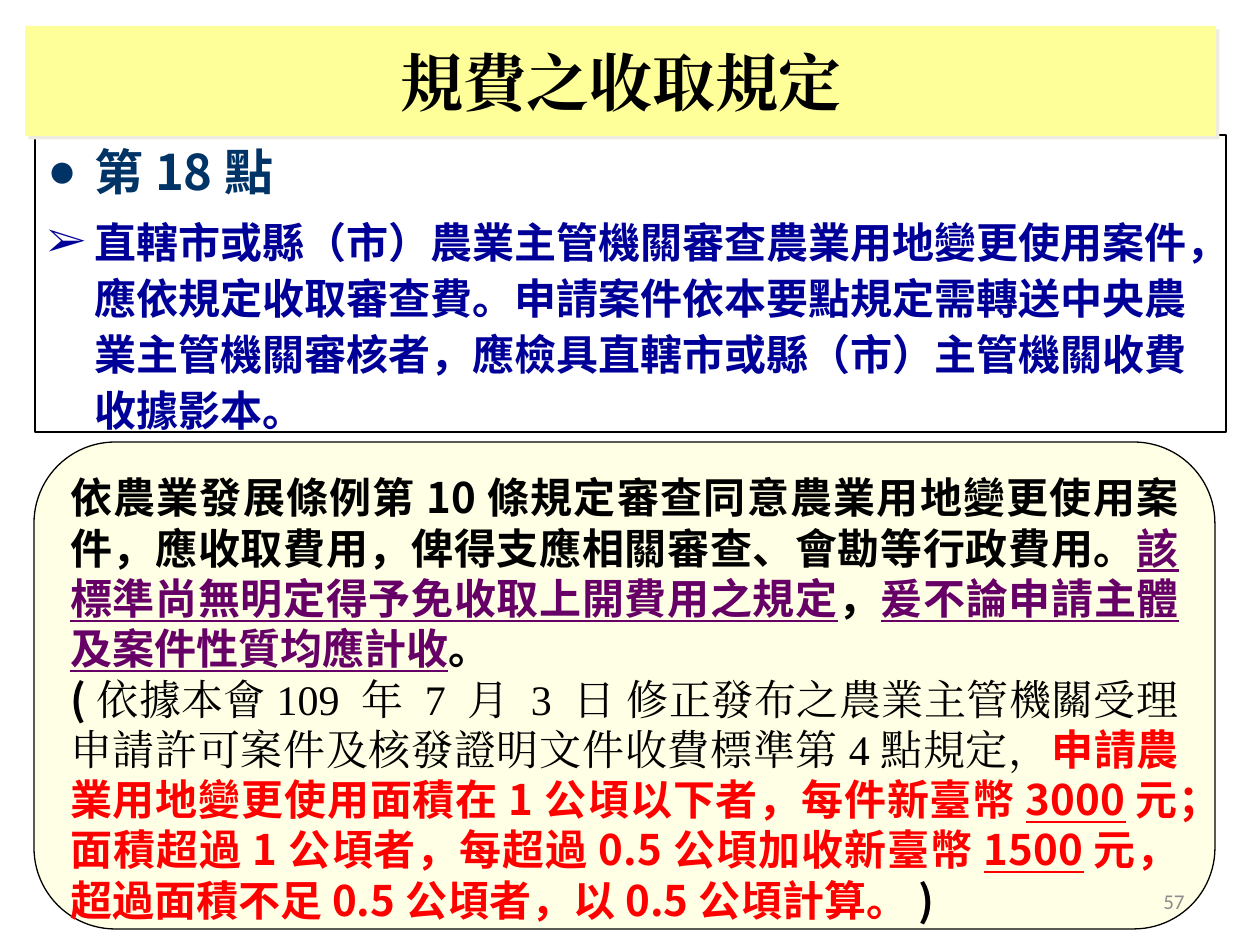
from lxml import etree
from pptx import Presentation
from pptx import util as u
from pptx.dml.color import RGBColor
from pptx.enum import shapes, text
from pptx.oxml.ns import qn

EMU_PER_PX = 914400 / 126
SANS, SERIF = "Noto Sans CJK SC", "Times New Roman"
BLACK = RGBColor(0x00, 0x00, 0x00)
NAVY = RGBColor(0x00, 0x33, 0x66)
BLUE = RGBColor(0x00, 0x00, 0x99)
PURPLE = RGBColor(0x66, 0x00, 0x66)
RED = RGBColor(0xFF, 0x00, 0x00)
GREY = RGBColor(0x8C, 0x8C, 0x8C)
YELLOW = RGBColor(0xFF, 0xFF, 0x99)


def px(value):
    return u.Emu(round(value * EMU_PER_PX))


def add_xml(parent, tag, **attributes):
    return etree.SubElement(parent, qn(tag), attributes)


class SlideBuilder:
    def __init__(self, slide):
        self.slide = slide

    def box(self, kind, left, top, width, height, fill=None, alpha=None, outlined=True):
        shape = self.slide.shapes.add_shape(kind, px(left), px(top), px(width), px(height))
        shape.shadow.inherit = False
        if fill is None:
            shape.fill.background()
        else:
            shape.fill.solid()
            shape.fill.fore_color.rgb = fill
            if alpha is not None:
                color = shape.fill._xPr.find(qn("a:solidFill"))[0]
                add_xml(color, "a:alpha", val=str(alpha * 1000))
        if outlined:
            shape.line.color.rgb = BLACK
            shape.line.width = u.Pt(0.75)
        else:
            shape.line.fill.background()
        shape.text_frame.word_wrap = True
        shape.text_frame.vertical_anchor = text.MSO_ANCHOR.TOP
        return shape

    def drop_shadow(self, shape, color):
        effects = shape._element.spPr.find(qn("a:effectLst"))
        shadow = add_xml(effects, "a:outerShdw", dist=str(u.Pt(2.8)),
                         dir="2700000", algn="ctr", rotWithShape="0")
        add_xml(shadow, "a:srgbClr", val=color)

    def text_box(self, left, top, width, height):
        shape = self.slide.shapes.add_textbox(px(left), px(top), px(width), px(height))
        shape.text_frame.word_wrap = True
        return shape

    def paragraph(self, shape, align, line_spacing=None, before=0):
        frame = shape.text_frame
        first = frame.paragraphs[0]
        paragraph = frame.add_paragraph() if first.runs else first
        paragraph.alignment = align
        paragraph.space_before = u.Pt(before)
        if line_spacing:
            paragraph.line_spacing = u.Pt(line_spacing)
        return paragraph

    def bullet(self, paragraph, character, indent):
        properties = paragraph._p.get_or_add_pPr()
        properties.set("marL", str(px(indent)))
        properties.set("indent", str(-px(indent)))
        add_xml(properties, "a:buFont", typeface=SERIF)
        add_xml(properties, "a:buChar", char=character)

    def run(self, paragraph, words, size, color=BLACK, font=SANS, bold=True, underline=False):
        run = paragraph.add_run()
        run.text = words
        run.font.size = u.Pt(size)
        run.font.name = font
        run.font.bold = bold
        run.font.underline = underline
        run.font.color.rgb = color
        add_xml(run._r.get_or_add_rPr(), "a:ea", typeface=font)


def main():
    presentation = Presentation()
    presentation.slide_width, presentation.slide_height = px(1260), px(945)
    builder = SlideBuilder(presentation.slides.add_slide(presentation.slide_layouts[6]))
    rectangle = shapes.MSO_SHAPE.RECTANGLE
    align = text.PP_ALIGN

    rule = builder.box(rectangle, 35, 135, 1191, 297)
    for mark, words, size, color, spacing in (
        ("●", "第18點", 28, NAVY, None),
        ("➢", "直轄市或縣（市）農業主管機關審查農業用地變更使用案件，"
              "應依規定收取審查費。申請案件依本要點規定需轉送中央農業主管機關審核者，"
              "應檢具直轄市或縣（市）主管機關收費收據影本。", 24, BLUE, 32),
    ):
        paragraph = builder.paragraph(rule, align.LEFT, spacing, before=6)
        builder.bullet(paragraph, mark, 47)
        builder.run(paragraph, words, size, color)

    title = builder.box(rectangle, 25, 26, 1191, 110, YELLOW, outlined=False)
    builder.drop_shadow(title, "EEECE1")
    title.text_frame.vertical_anchor = text.MSO_ANCHOR.MIDDLE
    builder.run(builder.paragraph(title, align.CENTER), "規費之收取規定", 36, font=SERIF)

    note = builder.box(shapes.MSO_SHAPE.ROUNDED_RECTANGLE, 34, 442, 1181, 487, YELLOW, alpha=25)
    marked = {"color": PURPLE, "underline": True}
    fee = {"color": RED}
    amount = {"color": RED, "underline": True}
    for runs in (
        (("依農業發展條例第10條規定審查同意農業用地變更使用案件，應收取費用，"
          "俾得支應相關審查、會勘等行政費用。", {}),
         ("該標準尚無明定得予免收取上開費用之規定", marked),
         ("，", {}),
         ("爰不論申請主體及案件性質均應計收", marked),
         ("。", {})),
        (("(", {}),
         ("依據本會109 年 7 月 3 日 修正發布之農業主管機關受理申請許可案件"
          "及核發證明文件收費標準第4點規定，", {"font": SERIF, "bold": False}),
         ("申請農業用地變更使用面積在1公頃以下者，每件新臺幣", fee),
         ("3000", amount),
         ("元；面積超過1公頃者，每超過0.5公頃加收新臺幣", fee),
         ("1500", amount),
         ("元，超過面積不足0.5公頃者，以0.5公頃計算。", fee),
         (")", {})),
    ):
        paragraph = builder.paragraph(note, align.JUSTIFY, line_spacing=28.75)
        for words, style in runs:
            builder.run(paragraph, words, 24, **style)

    number = builder.text_box(903, 876, 294, 50)
    number.text_frame.vertical_anchor = text.MSO_ANCHOR.MIDDLE
    builder.run(builder.paragraph(number, align.RIGHT), "57", 12, GREY, "Calibri", bold=False)

    presentation.save("out.pptx")


if __name__ == "__main__":
    main()
